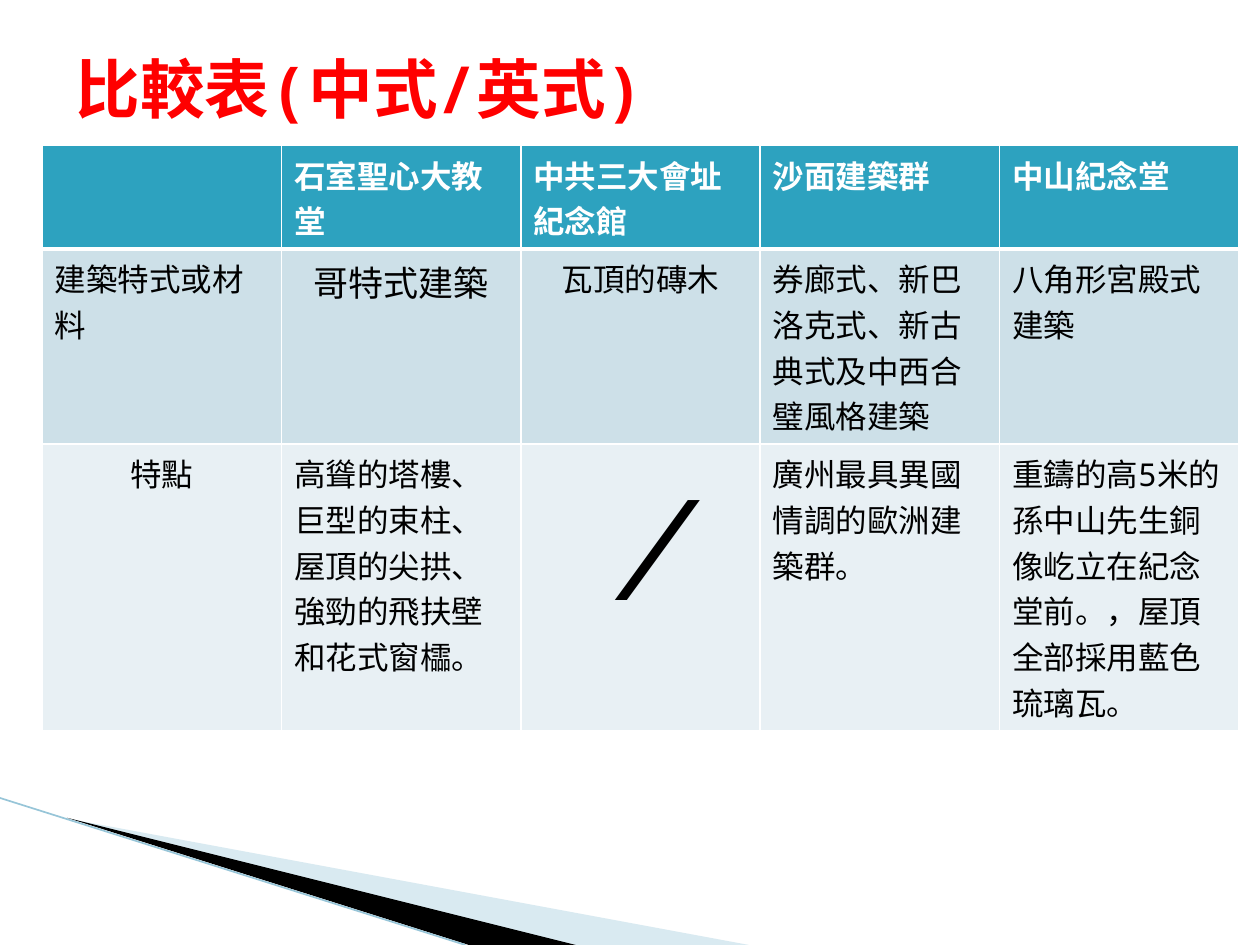
import dataclasses
import typing

import lxml.etree
import pptx
import pptx.dml.color
import pptx.enum.shapes
import pptx.enum.text
import pptx.oxml.ns
import pptx.util

Pt = pptx.util.Pt
Align = pptx.enum.text.PP_ALIGN
FONT = "Noto Sans Mono"
COLORS = {
    "red": "FF0000",
    "black": "000000",
    "white": "FFFFFF",
    "head": "2DA2BF",
    "dark": "CDE0E8",
    "light": "E8F0F4",
    "wedge": "A0CBDC",
    "edge": "97C5D8",
}


@dataclasses.dataclass
class Item:
    text: str
    size: float = 18
    center: bool = False
    slant: bool = False


@dataclasses.dataclass
class Row:
    height: float
    fill: str
    ink: str
    bold: bool
    base: float
    items: list[Item]


@dataclasses.dataclass
class Wedge:
    points: list[tuple[float, float]]
    fill: str
    alpha: int = 100


ROWS = [
    Row(58, "head", "white", True, 3, [
        Item(""),
        Item("石室聖心大教堂"),
        Item("中共三大會址紀念館"),
        Item("沙面建築群"),
        Item("中山紀念堂"),
    ]),
    Row(111, "dark", "black", False, 1, [
        Item("建築特式或材料"),
        Item("哥特式建築", size=20, center=True),
        Item("瓦頂的磚木", center=True),
        Item("券廊式、新巴洛克式、新古典式及中西合璧風格建築"),
        Item("八角形宮殿式建築"),
    ]),
    Row(163, "light", "black", False, 1, [
        Item("特點", center=True),
        Item("高聳的塔樓、巨型的束柱、屋頂的尖拱、強勁的飛扶壁和花式窗櫺。"),
        Item("/", size=80, center=True, slant=True),
        Item("廣州最具異國情調的歐洲建築群。"),
        Item("重鑄的高5米的孫中山先生銅像屹立在紀念堂前。，屋頂全部採用藍色琉璃瓦。"),
    ]),
]
WEDGES = [
    Wedge([(39.6, 468), (428, 540), (328, 540)], "wedge", 40),
    Wedge([(38.2, 467.3), (329, 540), (268, 540)], "black"),
]


def color(name: str) -> pptx.dml.color.RGBColor:
    return pptx.dml.color.RGBColor.from_string(COLORS[name])


def apply(thing: typing.Any, values: dict[str, typing.Any]) -> None:
    for name, value in values.items():
        setattr(thing, name, value)


def add_node(parent: typing.Any, tag: str, **values: str) -> typing.Any:
    return lxml.etree.SubElement(parent, pptx.oxml.ns.qn(tag), values)


def write(frame: typing.Any, text: str, align: typing.Any, ink: str, **style: typing.Any) -> None:
    part = frame.paragraphs[0]
    part.alignment = align
    run = part.add_run()
    run.text = text
    apply(run.font, {"name": FONT, **style})
    run.font.color.rgb = color(ink)


def draw_wedge(slide: typing.Any, wedge: Wedge) -> None:
    points = [(Pt(x), Pt(y)) for x, y in wedge.points]
    pen = slide.shapes.build_freeform(*points[0], scale=1.0)
    pen.add_line_segments(points[1:], close=True)
    shape = pen.convert_to_shape()
    shape.shadow.inherit = False
    shape.fill.solid()
    shape.fill.fore_color.rgb = color(wedge.fill)
    shape.line.fill.background()
    if wedge.alpha < 100:
        tint = shape.fill._xPr.find(".//" + pptx.oxml.ns.qn("a:srgbClr"))
        add_node(tint, "a:alpha", val=str(wedge.alpha * 1000))


def draw_edge(slide: typing.Any) -> None:
    kind = pptx.enum.shapes.MSO_CONNECTOR.STRAIGHT
    edge = slide.shapes.add_connector(kind, Pt(0), Pt(456), Pt(266), Pt(540))
    edge.line.color.rgb = color("edge")
    edge.line.width = Pt(0.95)
    add_node(edge._element.spPr, "a:effectLst")


def set_edges(cell: typing.Any, row: Row, top: float) -> None:
    props = cell._tc.get_or_add_tcPr()
    for side, width in {"L": 1, "R": 1, "T": top, "B": row.base}.items():
        line = add_node(props, "a:ln" + side, w=str(Pt(width)))
        fill = add_node(line, "a:solidFill")
        add_node(fill, "a:srgbClr", val=COLORS["white"])


def draw_table(slide: typing.Any) -> None:
    count = len(ROWS[0].items)
    width = 136.8
    total = sum(row.height for row in ROWS)
    table = slide.shapes.add_table(
        len(ROWS), count, Pt(24), Pt(83), Pt(width * count), Pt(total)
    ).table
    for column in table.columns:
        column.width = Pt(width)
    top = 1
    for r, row in enumerate(ROWS):
        table.rows[r].height = Pt(row.height)
        for c, item in enumerate(row.items):
            cell = table.cell(r, c)
            set_edges(cell, row, top)
            cell.fill.solid()
            cell.fill.fore_color.rgb = color(row.fill)
            if item.text:
                align = Align.CENTER if item.center else Align.LEFT
                write(cell.text_frame, item.text, align, row.ink,
                      size=Pt(item.size), bold=row.bold, italic=item.slant)
        top = row.base


def draw_title(slide: typing.Any) -> None:
    title = slide.shapes.title
    apply(title, {"left": Pt(36), "top": Pt(-18), "width": Pt(648), "height": Pt(90)})
    apply(title.text_frame, {
        "word_wrap": True,
        "auto_size": pptx.enum.text.MSO_AUTO_SIZE.NONE,
        "vertical_anchor": pptx.enum.text.MSO_ANCHOR.BOTTOM,
        "margin_bottom": Pt(0),
    })
    write(title.text_frame, "比較表(中式/英式)", Align.LEFT, "red", size=Pt(36.9), bold=True)


def main() -> None:
    deck = pptx.Presentation()
    apply(deck, {"slide_width": Pt(720), "slide_height": Pt(540)})
    slide = deck.slides.add_slide(deck.slide_layouts[5])
    for wedge in WEDGES:
        draw_wedge(slide, wedge)
    draw_edge(slide)
    draw_table(slide)
    draw_title(slide)
    deck.save("out.pptx")


if __name__ == "__main__":
    main()
